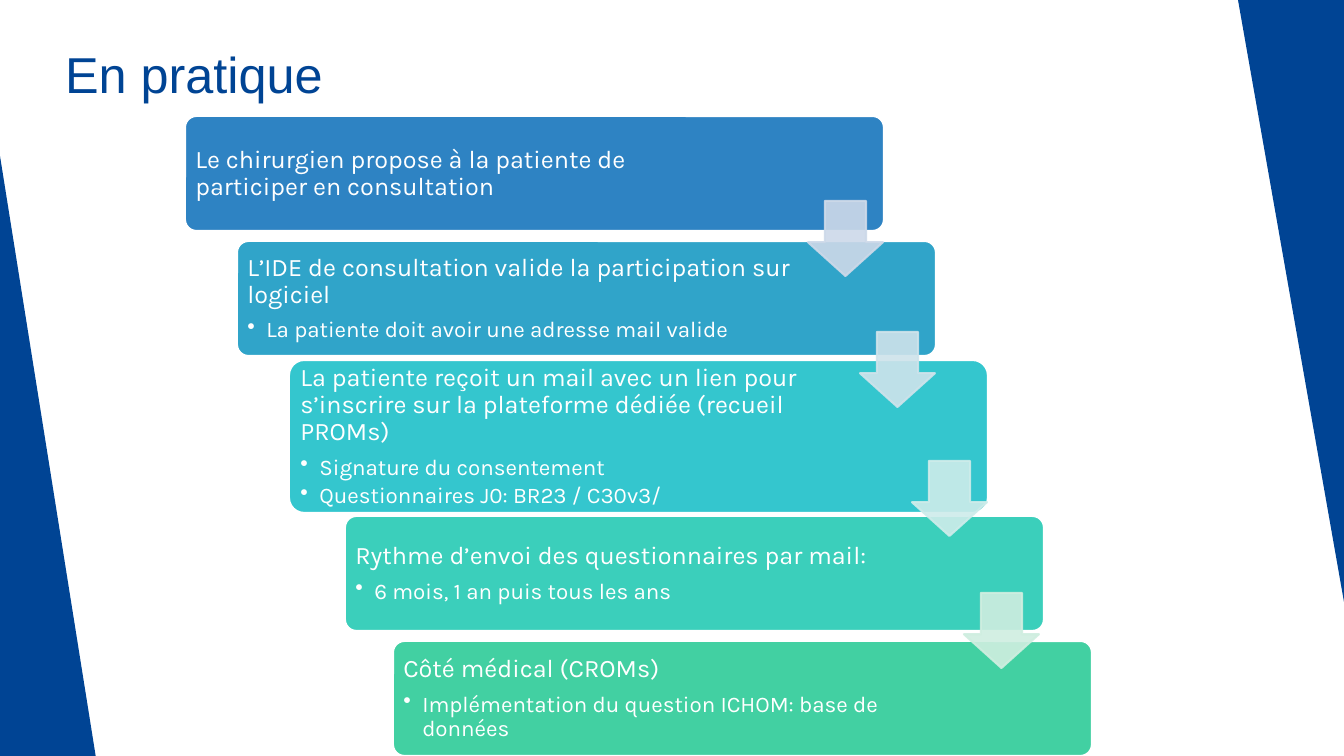
from lxml.etree import SubElement
from pptx import Presentation
from pptx.dml.color import RGBColor
from pptx.enum.shapes import MSO_SHAPE as Shape
from pptx.enum.text import MSO_ANCHOR as Anchor, PP_ALIGN as Align
from pptx.oxml.ns import qn
from pptx.util import Emu, Pt

EMU_PER_PX = 12192000 / 1344

COLORS = {
    "navy": "004494", "white": "FFFFFF",
    "step1": "2E83C3", "step2": "30A4C9", "step3": "34C6CE",
    "step4": "3BCFBB", "step5": "42D0A2",
    "arrow1": "CDD9E9", "arrow2": "CEE3EB", "arrow3": "CEECEA", "arrow4": "CFEEE0",
}

# Each step: left, top, height, heading, bullets
STEPS = [
    (185, 116, 115, "Le chirurgien propose à la patiente de participer en consultation", []),
    (237, 241, 115, "L’IDE de consultation valide la participation sur logiciel",
     ["La patiente doit avoir une adresse mail valide"]),
    (289, 360, 153,
     "La patiente reçoit un mail avec un lien pour s’inscrire sur la plateforme "
     "dédiée (recueil PROMs)",
     ["Signature du consentement", "Questionnaires J0: BR23 / C30v3/"]),
    (345, 516, 115, "Rythme d’envoi des questionnaires par mail:",
     ["6 mois, 1 an puis tous les ans"]),
    (393, 641, 115, "Côté médical (CROMs)",
     ["Implémentation du question ICHOM: base de données"]),
]
ARROW_TOPS = [201, 332, 461, 593]


def px(value):
    return Emu(round(value * EMU_PER_PX))


def color(name):
    return RGBColor.from_string(COLORS[name])


def write(paragraph, text, size, ink="white", font="Karla", spacing=0.9, after=0, bullet=False):
    if bullet:
        properties = paragraph._p.get_or_add_pPr()
        properties.set("marL", str(px(19)))
        properties.set("indent", str(-px(19)))
        SubElement(properties, qn("a:buChar"), char="•")
    paragraph.alignment = Align.LEFT
    paragraph.line_spacing = spacing
    paragraph.space_after = Pt(after)
    run = paragraph.add_run()
    run.text = text
    run.font.name, run.font.size = font, Pt(size)
    run.font.color.rgb = color(ink)


class StepSlide:
    CARD_WIDTH = 699
    ARROW_SIZE = 75

    def __init__(self, presentation):
        self.slide = presentation.slides.add_slide(presentation.slide_layouts[5])

    def title(self, text, left, top, width, height):
        title = self.slide.shapes.title
        title.left, title.top, title.width, title.height = map(px, (left, top, width, height))
        title.text_frame.vertical_anchor = Anchor.MIDDLE
        write(title.text_frame.paragraphs[0], text, 36, ink="navy", font="Arial", spacing=1.0)

    def shape(self, kind, left, top, width, height, fill, outline=None, adjustments=()):
        shape = self.slide.shapes.add_shape(kind, *map(px, (left, top, width, height)))
        shape.shadow.inherit = False
        shape.fill.solid()
        shape.fill.fore_color.rgb = color(fill)
        if outline:
            shape.line.color.rgb = color(outline)
            shape.line.width = Pt(1.5)
        else:
            shape.line.fill.background()
        for index, value in enumerate(adjustments):
            shape.adjustments[index] = value
        return shape

    def card(self, left, top, height, heading, bullets, fill):
        card = self.shape(Shape.ROUNDED_RECTANGLE, left, top, self.CARD_WIDTH, height,
                          fill, "white", [0.1])
        frame = card.text_frame
        frame.word_wrap = True
        frame.vertical_anchor = Anchor.MIDDLE
        frame.margin_left = frame.margin_top = frame.margin_bottom = px(7)
        frame.margin_right = px(140)
        write(frame.paragraphs[0], heading, 18, after=7 if bullets else 0)
        for bullet in bullets:
            write(frame.add_paragraph(), bullet, 16, after=3, bullet=True)

    def arrow(self, left, top, fill):
        arrow = self.shape(Shape.DOWN_ARROW, left, top, self.ARROW_SIZE, self.ARROW_SIZE,
                           fill, fill, [0.55, 0.45])
        for tint in arrow._element.spPr.iter(qn("a:srgbClr")):
            SubElement(tint, qn("a:alpha"), val="90000")


def main():
    presentation = Presentation()
    presentation.slide_width, presentation.slide_height = px(1344), px(756)
    page = StepSlide(presentation)

    # Side wedges
    page.shape(Shape.RIGHT_TRIANGLE, 0, 156, 96, 602, "navy")
    page.shape(Shape.RIGHT_TRIANGLE, 1238, 0, 106, 602, "navy").rotation = 180

    # Title
    page.title("En pratique", 55, 30, 907, 86)

    # Staircase of steps
    for number, step in enumerate(STEPS, 1):
        page.card(*step, fill=f"step{number}")

    # Arrows between steps
    for index, top in enumerate(ARROW_TOPS):
        page.arrow(808 + 52 * index, top, f"arrow{index + 1}")

    presentation.save("out.pptx")


if __name__ == "__main__":
    main()
